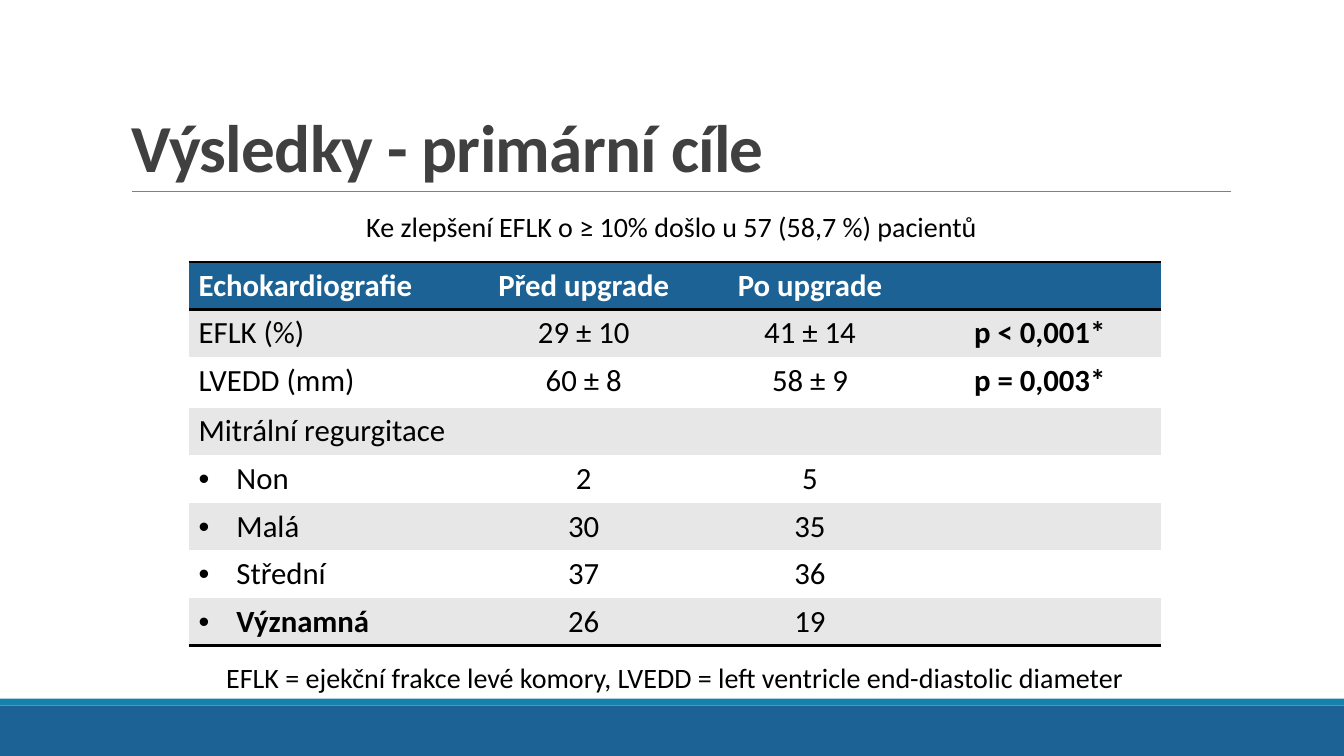
from pptx import Presentation
from pptx.dml.color import RGBColor
from pptx.enum.shapes import MSO_CONNECTOR, MSO_SHAPE
from pptx.enum.text import MSO_ANCHOR, MSO_AUTO_SIZE, PP_ALIGN
from pptx.oxml.ns import qn
from pptx.util import Pt
from lxml.etree import SubElement

TITLE = "Výsledky - primární cíle"
NOTES = [
    (146, "Ke zlepšení EFLK o ≥ 10% došlo u 57 (58,7 %) pacientů "),
    (468, "EFLK = ejekční frakce levé komory, "
          "LVEDD = left ventricle end-diastolic diameter"),
]
ROWS = [
    ("Echokardiografie", "Před upgrade", "Po upgrade", ""),
    ("EFLK (%)", "29 ± 10", "41 ± 14", "p < 0,001*"),
    ("LVEDD (mm)", "60 ± 8", "58 ± 9", "p = 0,003*"),
    ("Mitrální regurgitace", "", "", ""),
    ("Non", "2", "5", ""),
    ("Malá", "30", "35", ""),
    ("Střední", "37", "36", ""),
    ("Významná", "26", "19", ""),
]
GRADES = range(4, 8)  # rows listed under regurgitation
LAST = len(ROWS) - 1
COLS = [198, 168.5, 154.8, 173.5]
HIGH = [34, 34, 36, 34, 34, 34, 34, 34]
COLOR = {"navy": "1C6294", "teal": "1482AB", "rule": "808080", "title": "404040",
         "text": "000000", "white": "FFFFFF", "band": "E7E7E7"}
WIDE, TALL = 960, 540
PLAIN = "{2D5ABB26-0587-4C30-8999-92F81FD0307C}"  # table style without grid


def rgb(name):
    return RGBColor.from_string(COLOR[name])


def write(frame, text, color, align=PP_ALIGN.LEFT, **font):
    para = frame.paragraphs[0]
    para.alignment = align
    run = para.add_run()
    run.text = text
    for key, value in {"name": "Calibri", **font}.items():
        setattr(run.font, key, value)
    run.font.color.rgb = rgb(color)
    return para, run


def bar(top, height, color):
    shape = slide.shapes.add_shape(MSO_SHAPE.RECTANGLE, 0, Pt(top), Pt(WIDE), Pt(height))
    shape.shadow.inherit = False
    shape.fill.solid()
    shape.fill.fore_color.rgb = rgb(color)
    shape.line.fill.background()


def edge(cell, *sides):
    """Draw black 2 pt borders; they must precede the cell fill in the XML."""
    props = cell._tc.get_or_add_tcPr()
    for side in sides:
        line = SubElement(props, qn("a:" + side), w=str(Pt(2)))
        fill = SubElement(line, qn("a:solidFill"))
        SubElement(fill, qn("a:srgbClr"), val=COLOR["text"])


def bullet(para):
    props = para._p.get_or_add_pPr()
    for key, value in {"marL": Pt(27), "indent": -Pt(27)}.items():
        props.set(key, str(value))
    SubElement(props, qn("a:buFont"), typeface="Arial")
    SubElement(props, qn("a:buChar"), char="•")


deck = Presentation()
deck.slide_width, deck.slide_height = Pt(WIDE), Pt(TALL)
slide = deck.slides.add_slide(deck.slide_layouts[5])

bar(504, 36, "navy")
bar(499, 5, "teal")
rule = slide.shapes.add_connector(
    MSO_CONNECTOR.STRAIGHT, Pt(94.4), Pt(136.8), Pt(879.2), Pt(136.8))
rule.line.width = Pt(0.5)
rule.line.color.rgb = rgb("rule")
SubElement(rule._element.spPr, qn("a:effectLst"))

title = slide.shapes.title
place = {"left": 86.4, "top": 22.3, "width": 792, "height": 114.5}
for key, value in place.items():
    setattr(title, key, Pt(value))
title.text_frame.auto_size = MSO_AUTO_SIZE.NONE
title.text_frame.vertical_anchor = MSO_ANCHOR.BOTTOM
para, run = write(title.text_frame, TITLE, "title", size=Pt(48), bold=True)
para.line_spacing = 0.85
run.font._element.set("spc", "-50")

frame = slide.shapes.add_table(
    len(ROWS), len(COLS), Pt(134.7), Pt(187.2), Pt(sum(COLS)), Pt(sum(HIGH)))
table = frame.table
table.horz_banding = False
table.first_row = False
table._tbl.tblPr.find(qn("a:tableStyleId")).text = PLAIN
for col, width in zip(table.columns, COLS):
    col.width = Pt(width)
for row, height in zip(table.rows, HIGH):
    row.height = Pt(height)

for r, texts in enumerate(ROWS):
    head = r == 0
    for c, text in enumerate(texts):
        cell = table.cell(r, c)
        if head:
            edge(cell, "lnT", "lnB")
        elif r == LAST:
            edge(cell, "lnB")
        cell.fill.solid()
        cell.fill.fore_color.rgb = rgb("navy" if head else "band" if r % 2 else "white")
        if not text:
            continue
        bold = head or c == 3 or (r == LAST and c == 0)
        para, run = write(cell.text_frame, text, "white" if head else "text",
                          PP_ALIGN.CENTER if c else PP_ALIGN.LEFT,
                          size=Pt(22), bold=bold)
        if c == 0 and r in GRADES:
            bullet(para)

for top, text in NOTES:
    box = slide.shapes.add_textbox(Pt(2), Pt(top), Pt(WIDE), Pt(31.5))
    box.text_frame.word_wrap = True
    write(box.text_frame, text, "text", PP_ALIGN.CENTER, size=Pt(20))

deck.save("out.pptx")
